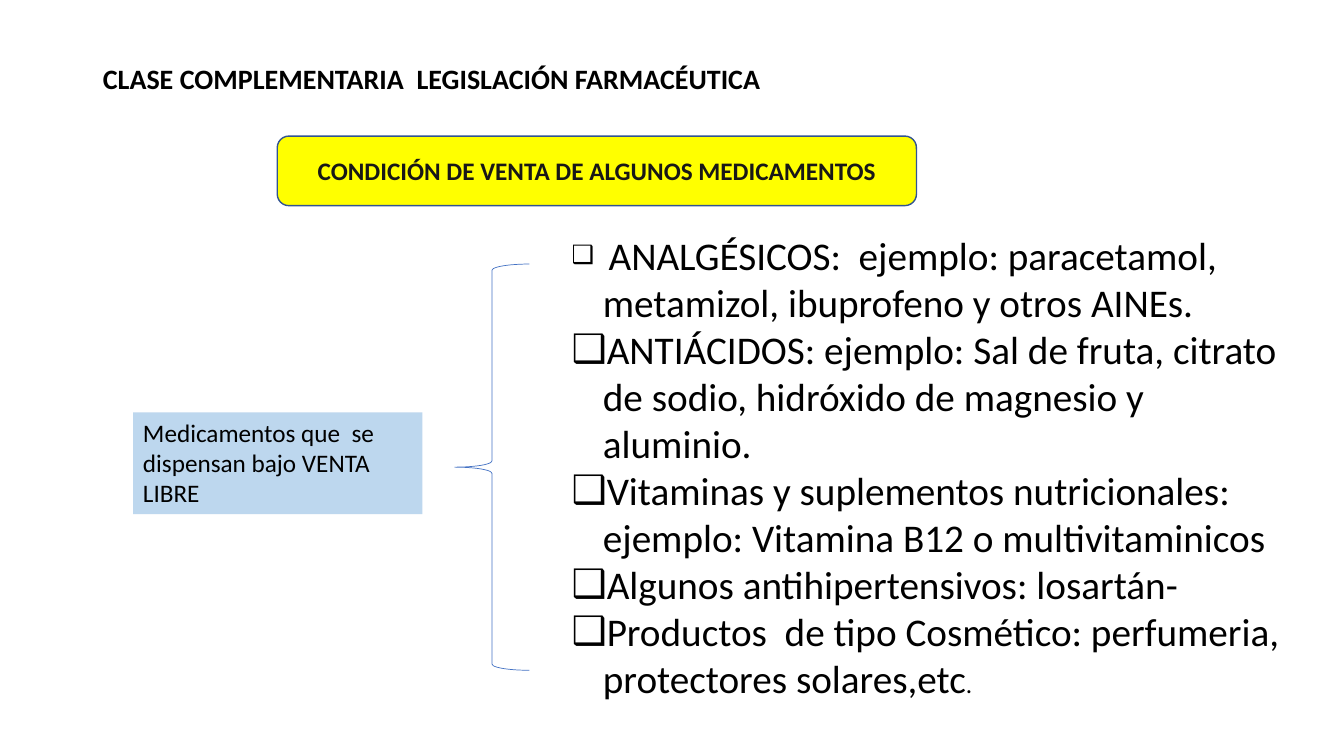
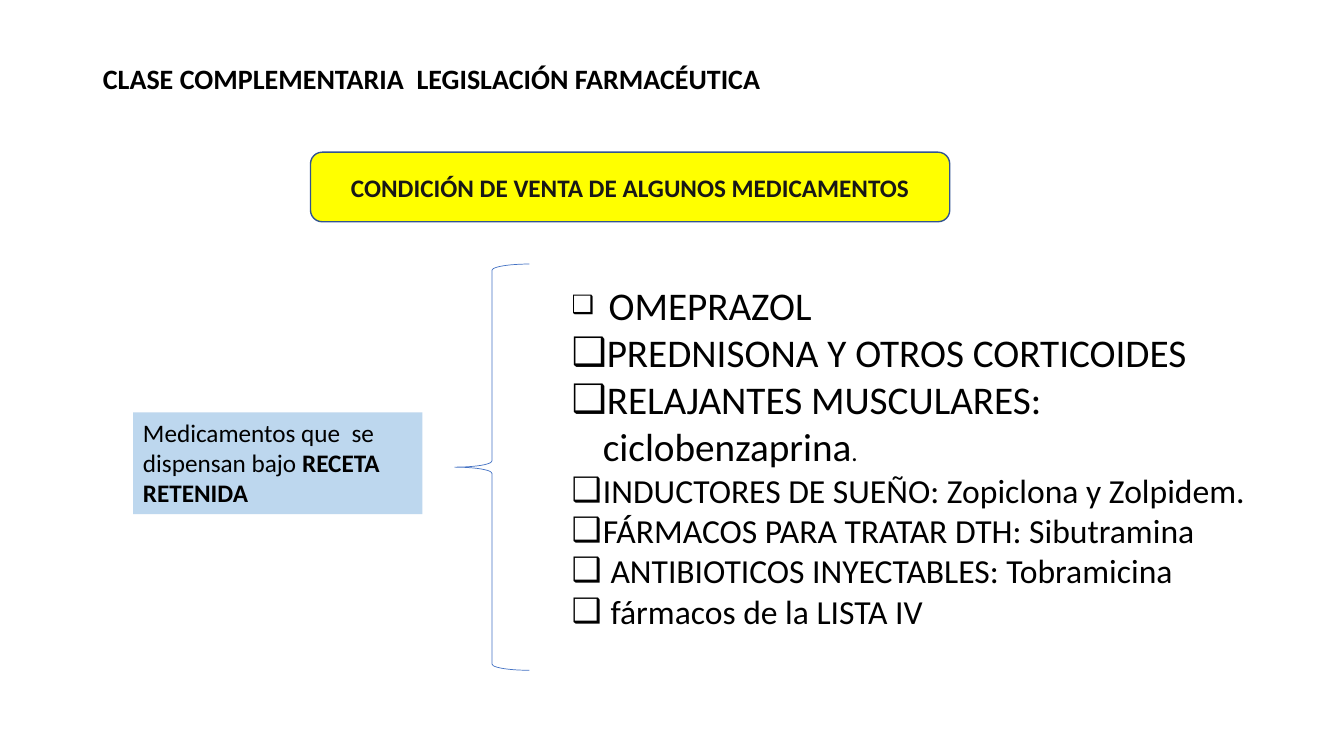
from typing import NamedTuple

from lxml.etree import SubElement
from pptx import Presentation
from pptx.dml.color import RGBColor
from pptx.enum.shapes import MSO_SHAPE
from pptx.enum.text import MSO_ANCHOR, MSO_AUTO_SIZE, PP_ALIGN
from pptx.oxml.ns import qn
from pptx.util import Emu, Pt

PX = 9144  # 100 px to the inch
FONT = "Calibri"
COLORS = {
    "text": "000000",
    "banner": "FFFF00",
    "banner_line": "325491",
    "banner_text": "181717",
    "category": "BDD7EE",
    "brace": "4472C4",
}
HEADING = "CLASE COMPLEMENTARIA  LEGISLACIÓN FARMACÉUTICA"
BANNER = "CONDICIÓN DE VENTA DE ALGUNOS MEDICAMENTOS"
CATEGORY = "Medicamentos que  se  dispensan bajo "
INDENT = 31


class Box(NamedTuple):
    left: int
    top: int
    width: int
    height: int


class Piece(NamedTuple):
    """Text whose size or weight may differ from its paragraph's."""
    text: str
    size: int | None = None
    bold: bool | None = None


class Item(NamedTuple):
    pieces: list[Piece]
    size: int = 28


class SaleCondition(NamedTuple):
    banner_at: tuple[int, int]
    category: list[Piece]
    list_box: Box
    items: list[Item]


CONDITIONS = [
    SaleCondition(
        (275, 135),
        [Piece(CATEGORY + "VENTA LIBRE")],
        Box(557, 224, 728, 510),
        [
            Item([Piece(" ", 18),
                  Piece("ANALGÉSICOS:  ejemplo: paracetamol, metamizol, ibuprofeno y otros AINEs.")]),
            Item([Piece("ANTIÁCIDOS: ejemplo: Sal de fruta, citrato de sodio, "
                        "hidróxido de magnesio y aluminio.")]),
            Item([Piece("Vitaminas y suplementos nutricionales:  ejemplo: "
                        "Vitamina B12 o multivitaminicos")]),
            Item([Piece("Algunos antihipertensivos: losartán-")]),
            Item([Piece("Productos  de tipo Cosmético: perfumeria, protectores solares,etc"),
                  Piece(".", 18)]),
        ],
    ),
    SaleCondition(
        (308, 151),
        [Piece(CATEGORY), Piece("RECETA RETENIDA", bold=True)],
        Box(557, 274, 728, 451),
        [
            Item([Piece(" ", 18), Piece("OMEPRAZOL")]),
            Item([Piece("PREDNISONA Y OTROS CORTICOIDES")]),
            Item([Piece("RELAJANTES MUSCULARES: ciclobenzaprina"), Piece(".", 18)]),
            Item([Piece("INDUCTORES DE SUEÑO: Zopiclona y Zolpidem.")], 24),
            Item([Piece("FÁRMACOS PARA TRATAR DTH: Sibutramina")], 24),
            Item([Piece(" ANTIBIOTICOS INYECTABLES: Tobramicina")], 24),
            Item([Piece(" fármacos de la LISTA IV")], 24),
        ],
    ),
]


def rgb(name: str) -> RGBColor:
    return RGBColor.from_string(COLORS[name])


def place(shape, box: Box) -> None:
    shape.left, shape.top, shape.width, shape.height = (Emu(v * PX) for v in box)


def write(paragraph, pieces: list[Piece], size: int, color: str = "text",
          bold: bool = False, align: PP_ALIGN = PP_ALIGN.LEFT) -> None:
    paragraph.alignment = align
    font = paragraph.font
    font.name, font.size, font.bold = FONT, Pt(size), bold
    font.color.rgb = rgb(color)
    for piece in pieces:
        run = paragraph.add_run()
        run.text = piece.text
        if piece.size:
            run.font.size = Pt(piece.size)
        if piece.bold is not None:
            run.font.bold = piece.bold


def add_box(slide, kind: MSO_SHAPE, box: Box, fill: str | None = None,
            line: str | None = None, weight: float = 1):
    shape = slide.shapes.add_shape(kind, *(Emu(v * PX) for v in box))
    shape.shadow.inherit = False
    if fill:
        shape.fill.solid()
        shape.fill.fore_color.rgb = rgb(fill)
    else:
        shape.fill.background()
    if line:
        shape.line.color.rgb = rgb(line)
        shape.line.width = Pt(weight)
    else:
        shape.line.fill.background()
    shape.text_frame.word_wrap = True
    return shape


def add_bullet(paragraph) -> None:
    properties = paragraph._p.get_or_add_pPr()
    properties.set("marL", str(INDENT * PX))
    properties.set("indent", str(-INDENT * PX))
    SubElement(properties, qn("a:buChar")).set("char", "❑")


def fill_title(title) -> None:
    place(title, Box(92, 40, 690, 80))
    frame = title.text_frame
    frame.auto_size = MSO_AUTO_SIZE.NONE
    frame.vertical_anchor = MSO_ANCHOR.MIDDLE
    heading = frame.paragraphs[0]
    write(heading, [Piece(HEADING)], 20, bold=True)
    heading.line_spacing = 0.9


def fill_list(body, box: Box, items: list[Item]) -> None:
    place(body, box)
    frame = body.text_frame
    frame.auto_size = MSO_AUTO_SIZE.NONE
    frame.vertical_anchor = MSO_ANCHOR.TOP
    for index, item in enumerate(items):
        paragraph = frame.add_paragraph() if index else frame.paragraphs[0]
        add_bullet(paragraph)
        write(paragraph, item.pieces, item.size)
        paragraph.space_before = Pt(0)


def add_condition(deck, condition: SaleCondition) -> None:
    slide = deck.slides.add_slide(deck.slide_layouts[1])
    fill_title(slide.shapes.title)

    # Yellow banner
    banner = add_box(slide, MSO_SHAPE.ROUNDED_RECTANGLE,
                     Box(*condition.banner_at, 634, 69), "banner", "banner_line")
    banner.text_frame.vertical_anchor = MSO_ANCHOR.MIDDLE
    write(banner.text_frame.paragraphs[0], [Piece(BANNER)], 18,
          "banner_text", True, PP_ALIGN.CENTER)

    # Sale category and the brace that opens its list
    category = add_box(slide, MSO_SHAPE.RECTANGLE, Box(132, 409, 287, 101), "category")
    category.text_frame.vertical_anchor = MSO_ANCHOR.TOP
    write(category.text_frame.paragraphs[0], condition.category, 18)
    add_box(slide, MSO_SHAPE.LEFT_BRACE, Box(451, 262, 74, 403), line="brace", weight=0.5)

    # Medicines
    fill_list(slide.placeholders[1], condition.list_box, condition.items)


def main() -> None:
    deck = Presentation()
    deck.slide_width, deck.slide_height = Emu(1333 * PX), Emu(750 * PX)
    for condition in CONDITIONS:
        add_condition(deck, condition)
    deck.save("out.pptx")


if __name__ == "__main__":
    main()
